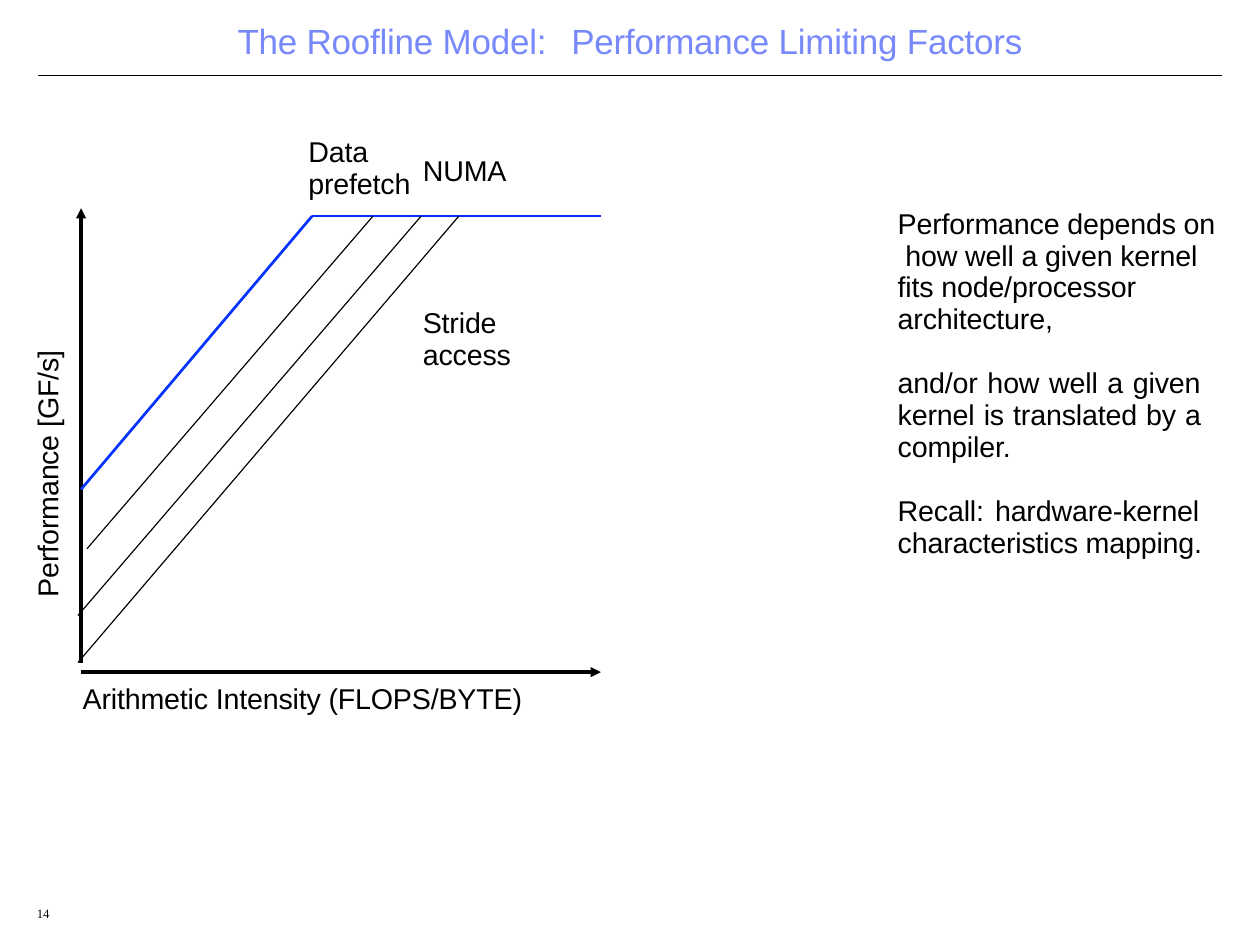
from dataclasses import dataclass

from lxml import etree
from pptx import Presentation
from pptx.dml.color import RGBColor
from pptx.enum.shapes import MSO_CONNECTOR
from pptx.enum.text import MSO_ANCHOR, PP_ALIGN
from pptx.oxml.ns import qn
from pptx.util import Pt

STRAIGHT = MSO_CONNECTOR.STRAIGHT
TOP = MSO_ANCHOR.TOP
LEFT, JUSTIFY = PP_ALIGN.LEFT, PP_ALIGN.JUSTIFY


@dataclass(frozen=True)
class Theme:
    ink: RGBColor = RGBColor(0x00, 0x00, 0x00)
    title: RGBColor = RGBColor(0x78, 0x89, 0xFB)
    roof: RGBColor = RGBColor(0x04, 0x33, 0xFF)
    sans: str = "Arial"
    serif: str = "Times New Roman"
    title_size: float = 22
    body_size: float = 18
    number_size: float = 8
    leading: float = 20
    thin: float = 0.75
    roof_width: float = 1.7
    axis_width: float = 2.15


def apply(target, values):
    for name, value in values.items():
        setattr(target, name, value)


class SlideBuilder:
    def __init__(self, slide, theme):
        self.slide = slide
        self.theme = theme

    def line(self, start, end, width=None, color=None, arrow=False):
        points = [Pt(value) for value in (*start, *end)]
        connector = self.slide.shapes.add_connector(STRAIGHT, *points)
        connector.line.width = Pt(width or self.theme.thin)
        connector.line.color.rgb = color or self.theme.ink
        properties = connector._element.spPr
        if arrow:
            outline = properties.find(qn("a:ln"))
            etree.SubElement(outline, qn("a:tailEnd"), type="triangle")
        etree.SubElement(properties, qn("a:effectLst"))

    def text(self, place, paragraphs, size=None, font=None, color=None,
             align=LEFT, leading=None, before=0.9, gap=0, inset=1,
             tracking="-10", tab=None, rotated=False):
        theme = self.theme
        box = self.slide.shapes.add_textbox(*[Pt(value) for value in place])
        frame = box.text_frame
        apply(frame, {
            "word_wrap": True, "vertical_anchor": TOP,
            "margin_left": Pt(0 if rotated else 1), "margin_right": 0,
            "margin_top": Pt(inset), "margin_bottom": 0,
        })
        if rotated:
            frame._txBody.bodyPr.set("vert", "vert270")
        for index, words in enumerate(paragraphs):
            para = frame.add_paragraph() if index else frame.paragraphs[0]
            apply(para, {
                "alignment": align,
                "line_spacing": Pt(leading) if leading else None,
                "space_before": Pt(gap if index else before),
            })
            if tab:
                stops = etree.SubElement(para._p.get_or_add_pPr(), qn("a:tabLst"))
                etree.SubElement(stops, qn("a:tab"), pos=str(Pt(tab)), algn="l")
            span = para.add_run()
            span.text = words
            apply(span.font, {
                "name": font or theme.sans,
                "size": Pt(size or theme.body_size),
            })
            span.font.color.rgb = color or theme.ink
            span._r.get_or_add_rPr().set("spc", tracking)

    def block(self, place, paragraphs, **formats):
        self.text(place, paragraphs, leading=self.theme.leading,
                  before=3, inset=3, **formats)


def main():
    theme = Theme()
    deck = Presentation()
    deck.slide_width, deck.slide_height = Pt(792.7), Pt(594.7)
    page = SlideBuilder(deck.slides.add_slide(deck.slide_layouts[6]), theme)

    page.line((24, 47.7), (769, 47.7))
    page.text((148.5, 11.5, 504, 28),
              ["The Roofline Model:\tPerformance Limiting Factors"],
              size=theme.title_size, color=theme.title, tab=210)

    page.block((563.8, 128, 205, 84),
               ["Performance depends on  how well a given kernel  "
                "fits node/processor  architecture,"])
    page.block((563.8, 228.4, 197.5, 124),
               ["and/or how well a given  kernel is translated by a  compiler.",
                "Recall: hardware-kernel  characteristics mapping."],
               align=JUSTIFY, gap=20.5)

    axis_left, axis_bottom, roof_top, roof_right = 51, 423, 136, 378
    ridge = (196.4, roof_top)
    axis = {"width": theme.axis_width, "arrow": True}
    roof = {"width": theme.roof_width, "color": theme.roof}
    page.line((axis_left, axis_bottom), (roof_right, axis_bottom), **axis)
    page.line((axis_left, 417), (axis_left, 131), **axis)
    page.line((axis_left, 308), ridge, **roof)
    page.line(ridge, (roof_right, roof_top), **roof)

    ceilings = [(234.7, 54.7, 345.4), (265, 49, 387.4), (288.7, 49, 417)]
    for top_x, foot_x, foot_y in ceilings:
        page.line((top_x, roof_top), (foot_x, foot_y))

    page.text((18.7, 211, 22.3, 164.8), ["Performance [GF/s]"],
              before=0, inset=0, rotated=True)
    page.text((51, 427.7, 290, 24), ["Arithmetic Intensity (FLOPS/BYTE)"])
    page.block((193, 82.8, 67, 44), ["Data  prefetch"])
    page.text((265, 95, 60, 24), ["NUMA"])
    page.block((265, 190.8, 59, 44), ["Stride  access"])
    page.text((22.2, 570.2, 14, 11), ["14"], size=theme.number_size,
              font=theme.serif, before=0, inset=0, tracking="0")

    deck.save("out.pptx")


if __name__ == "__main__":
    main()
